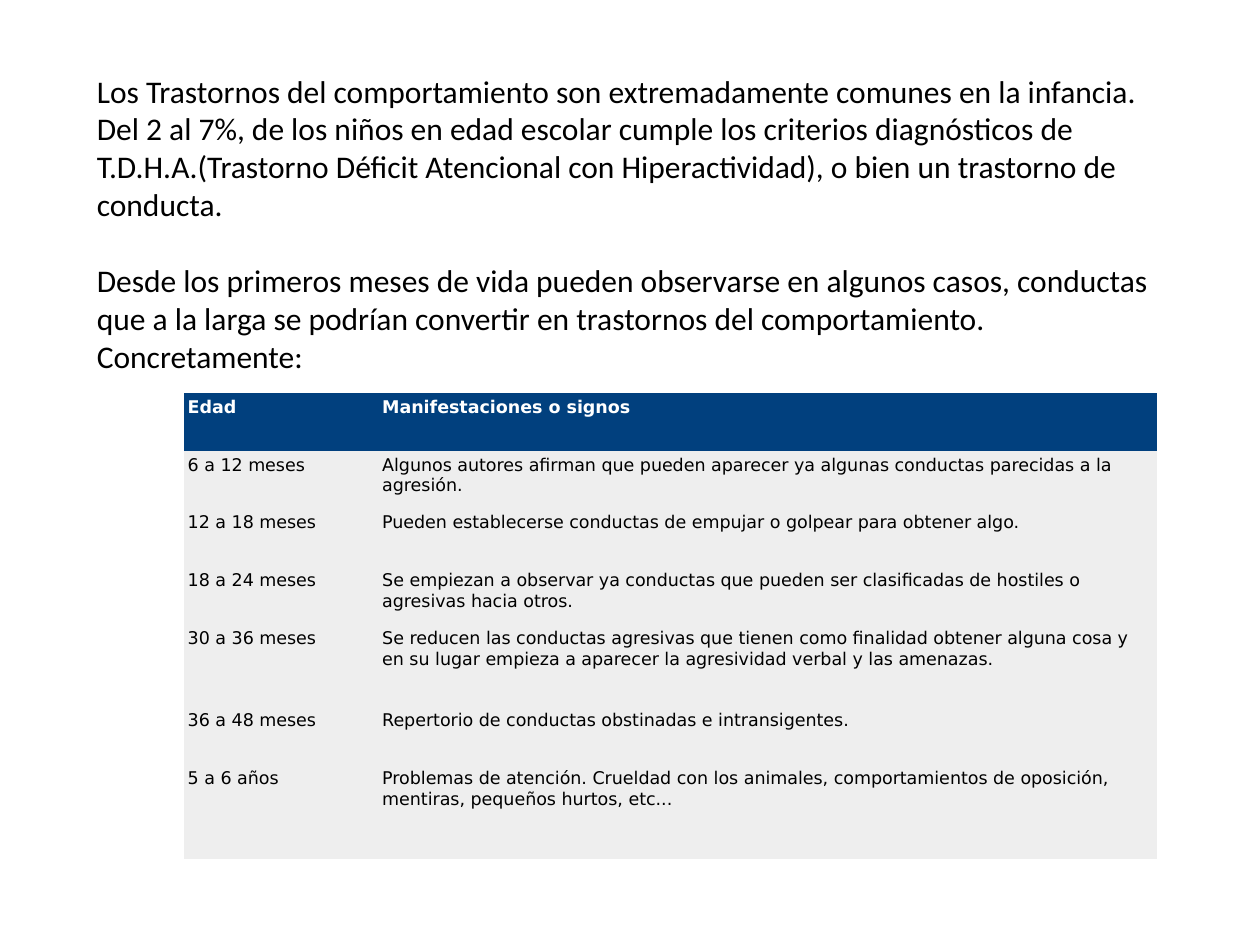
from pptx import Presentation, util as u
from pptx.dml.color import RGBColor
from pptx.enum import text
from pptx.oxml import ns

W, H = u.Inches(10), u.Inches(7.5)
COLORS = {"ink": "000000", "head": "01407E", "head_ink": "FFFFFF", "row": "EEEEEE"}
NO_STYLE = "{2D5ABB26-0587-4C30-8999-92F81FD0307C}"
INTRO = [
    "Los Trastornos del comportamiento son extremadamente comunes en la infancia. "
    "Del 2 al 7%, de los niños en edad escolar cumple los criterios diagnósticos "
    "de T.D.H.A.(Trastorno Déficit Atencional con Hiperactividad), o bien un "
    "trastorno de conducta.",
    "Desde los primeros meses de vida pueden observarse en algunos casos, conductas "
    "que a la larga se podrían convertir en trastornos del comportamiento. "
    "Concretamente:",
]
SIGNS = [
    ("Edad", "Manifestaciones o signos"),
    ("6 a 12 meses", "Algunos autores afirman que pueden aparecer ya algunas "
     "conductas parecidas a la agresión."),
    ("12 a 18 meses", "Pueden establecerse conductas de empujar o golpear para "
     "obtener algo."),
    ("18 a 24 meses", "Se empiezan a observar ya conductas que pueden ser "
     "clasificadas de hostiles o agresivas hacia otros."),
    ("30 a 36 meses", "Se reducen las conductas agresivas que tienen como finalidad "
     "obtener alguna cosa y en su lugar empieza a aparecer la agresividad verbal "
     "y las amenazas."),
    ("36 a 48 meses", "Repertorio de conductas obstinadas e intransigentes."),
    ("5 a 6 años", "Problemas de atención. Crueldad con los animales, "
     "comportamientos de oposición, mentiras, pequeños hurtos, etc..."),
]
ROW_HEIGHTS = [0.46, 0.46, 0.46, 0.46, 0.65, 0.46, 0.75]
INTRO_BOX = (0.067 * W, 0.52 / 7.5 * H, 0.858 * W, 2.83 / 7.5 * H)
TABLE_BOX = (0.146 * W, 3.12 / 7.5 * H, 0.772 * W, 3.7 / 7.5 * H)


def apply(obj, values):
    for name, value in values.items():
        setattr(obj, name, value)


def write(p, words, color, space, font):
    apply(p, space)
    r = p.add_run()
    r.text = words
    apply(r.font, font)
    r.font.color.rgb = RGBColor.from_string(COLORS[color])


def add_intro(s, box):
    tf = s.shapes.add_textbox(*map(int, box)).text_frame
    apply(tf, {"word_wrap": True, "auto_size": text.MSO_AUTO_SIZE.NONE})
    for i, words in enumerate(INTRO):
        p = tf.paragraphs[0] if i == 0 else tf.add_paragraph()
        write(p, words, "ink", {"space_before": u.Pt(22 * i)},
              {"name": "Calibri", "size": u.Pt(18)})


def add_signs(s, box):
    left, top, width, height = map(int, box)
    frame = s.shapes.add_table(len(SIGNS), 2, left, top, width, height)
    for style in frame.element.iter(ns.qn("a:tableStyleId")):
        style.text = NO_STYLE
    table = frame.table
    for column, share in zip(table.columns, (0.2, 0.8)):
        column.width = int(width * share)
    for row, share in zip(table.rows, ROW_HEIGHTS):
        row.height = int(height * share / sum(ROW_HEIGHTS))
    margins = {f"margin_{side}": u.Inches(0.03)
               for side in ("left", "right", "top", "bottom")}
    for i, words in enumerate(SIGNS):
        fill, ink = ("row", "ink") if i else ("head", "head_ink")
        for j, value in enumerate(words):
            cell = table.cell(i, j)
            apply(cell, margins)
            cell.fill.solid()
            cell.fill.fore_color.rgb = RGBColor.from_string(COLORS[fill])
            write(cell.text_frame.paragraphs[0], value, ink,
                  {"space_after": u.Pt(14)},
                  {"name": "DejaVu Sans", "size": u.Pt(10), "bold": i == 0})


def main():
    prs = Presentation()
    apply(prs, {"slide_width": W, "slide_height": H})
    s = prs.slides.add_slide(prs.slide_layouts[6])
    add_intro(s, INTRO_BOX)
    add_signs(s, TABLE_BOX)
    prs.save("out.pptx")


if __name__ == "__main__":
    main()
